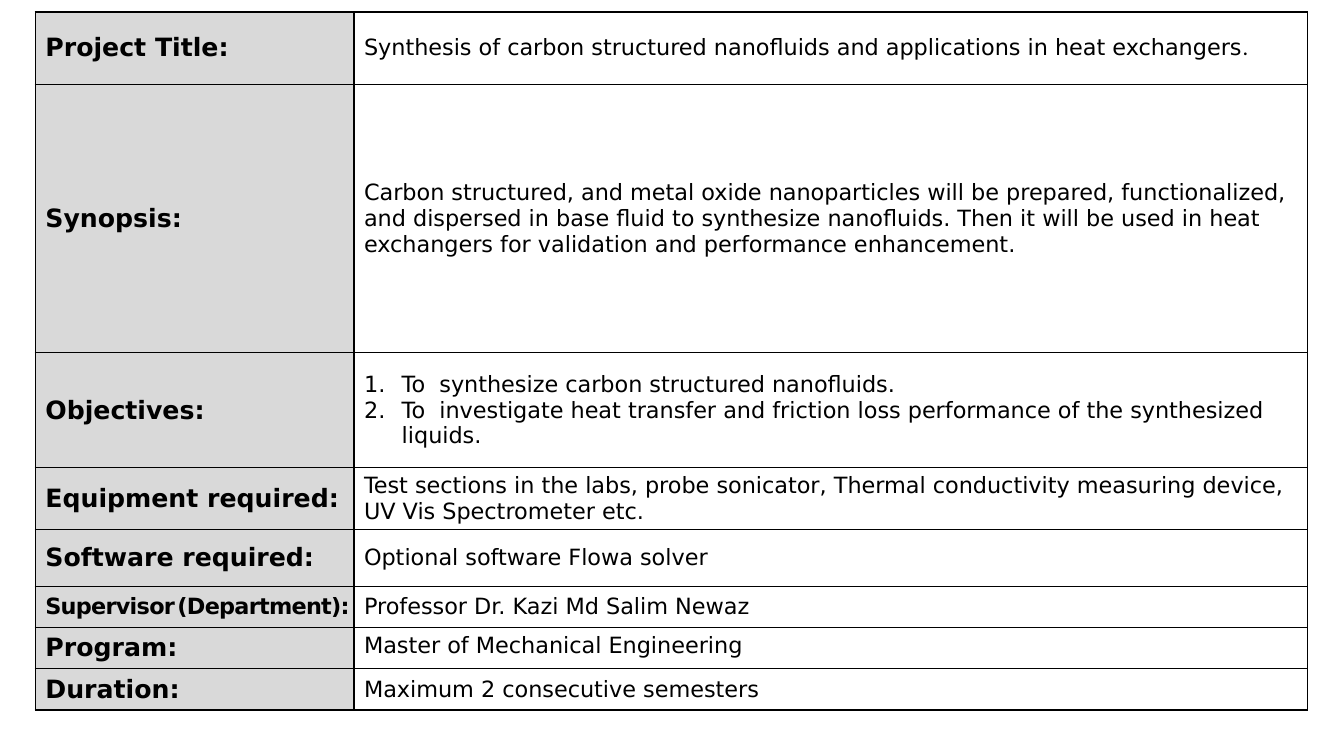
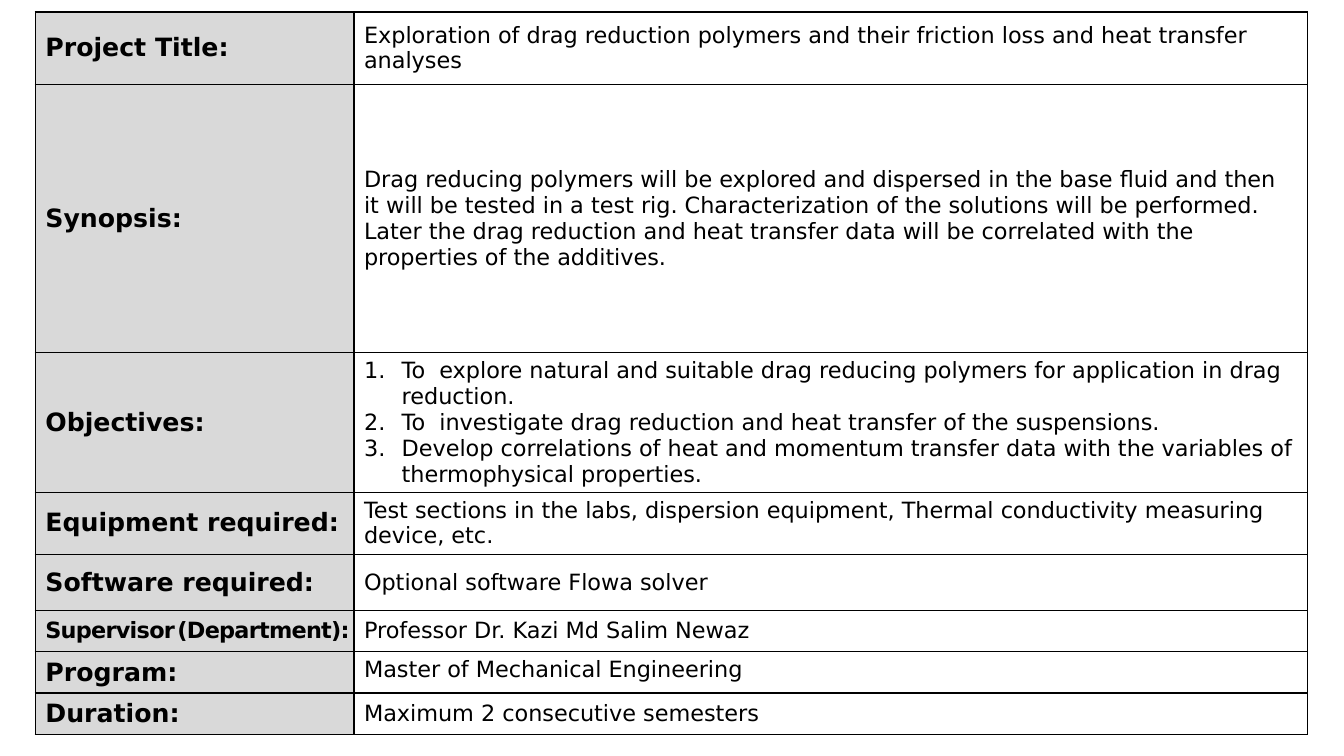
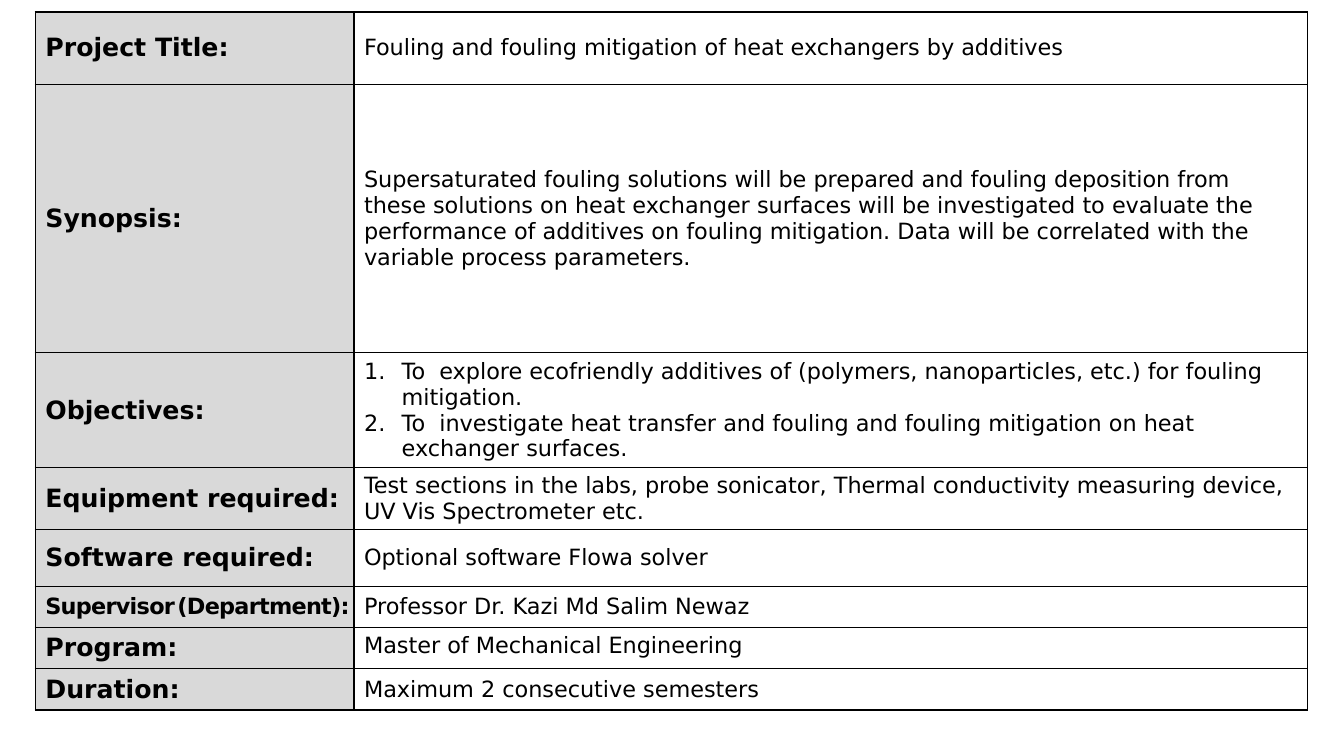
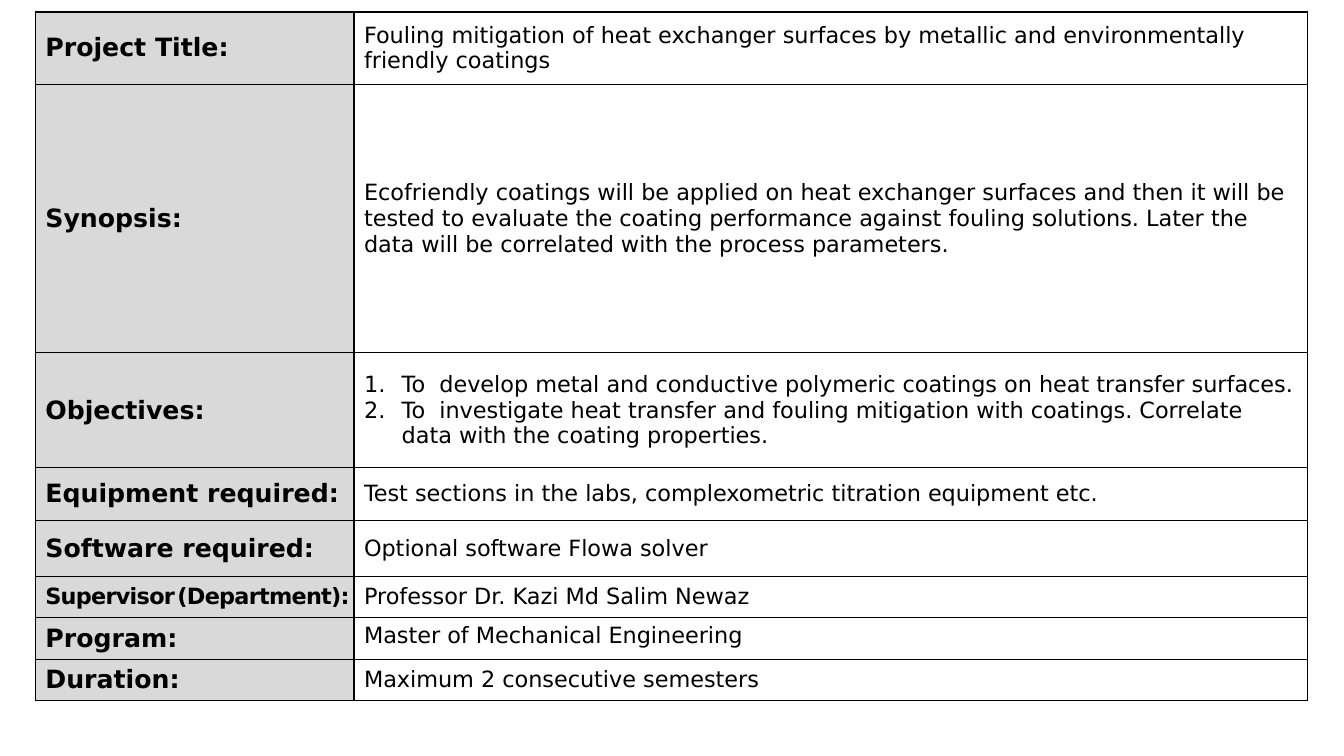
from dataclasses import dataclass
from typing import NamedTuple

from lxml import etree
from pptx import Presentation
from pptx.dml.color import RGBColor
from pptx.enum.text import MSO_ANCHOR
from pptx.oxml.ns import qn
from pptx.util import Cm, Pt

TOP, MIDDLE = MSO_ANCHOR.TOP, MSO_ANCHOR.MIDDLE

COLORS = {"text": "000000", "border": "000000", "label": "D9D9D9"}
FONT = "DejaVu Sans"
LABEL_SIZE, VALUE_SIZE = 18, 16
LEFT, TABLE_TOP = 0.89, 0.3
COLUMN_WIDTHS = (8.03, 24.03)
NUMBER_INDENT = 0.95


class Span(NamedTuple):
    text: str
    size: float = VALUE_SIZE
    bold: bool = False
    font: str = FONT
    spacing: float = 0


class Field(NamedTuple):
    label: list[Span]
    height: float
    value_anchor: MSO_ANCHOR = MIDDLE
    label_margin_right: float = 0.25


@dataclass(frozen=True)
class Project:
    title: list[Span]
    synopsis: str
    objectives: list[str]
    equipment: str
    software: str = "Optional software Flowa solver"
    supervisor: str = "Professor Dr. Kazi Md Salim Newaz"
    program: str = "Master of Mechanical Engineering"
    duration: str = "Maximum 2 consecutive semesters"

    def values(self) -> list[list[list[Span]]]:
        """Give the paragraphs of each field, in table order."""
        rest = (self.equipment, self.software, self.supervisor, self.program, self.duration)
        return [
            [self.title],
            [[Span(self.synopsis)]],
            [[Span(objective)] for objective in self.objectives],
            *([[Span(text)]] for text in rest),
        ]


def label(text: str) -> list[Span]:
    return [Span(text, LABEL_SIZE, True)]


SUPERVISOR_LABEL = [
    Span("Supervisor", bold=True, spacing=-0.5),
    Span(" ", 5, True, spacing=-0.5),
    Span("(Department):", bold=True, spacing=-0.5),
]

OBJECTIVES = Field(label("Objectives:"), 2.9)
FIELDS = [
    Field(label("Project Title:"), 1.83),
    Field(label("Synopsis:"), 6.76),
    OBJECTIVES,
    Field(label("Equipment required:"), 1.32),
    Field(label("Software required:"), 1.42),
    Field(SUPERVISOR_LABEL, 1.04, label_margin_right=0),
    Field(label("Program:"), 1.04, TOP),
    Field(label("Duration:"), 1.04),
]

SONICATOR_EQUIPMENT = (
    "Test sections in the labs, probe sonicator, Thermal conductivity measuring device, "
    "UV Vis Spectrometer etc."
)

PROJECTS = [
    Project(
        [
            Span("Synthesis of carbon structured nanofluids and applications in heat exchangers"),
            Span(".", font="Calibri"),
        ],
        "Carbon structured, and metal oxide nanoparticles will be prepared, functionalized, "
        "and dispersed in base fluid to synthesize nanofluids. Then it will be used in heat "
        "exchangers for validation and performance enhancement.",
        [
            "To  synthesize carbon structured nanofluids.",
            "To  investigate heat transfer and friction loss performance of the synthesized "
            "liquids.",
        ],
        SONICATOR_EQUIPMENT,
    ),
    Project(
        [Span("Exploration of drag reduction polymers and their friction loss and heat transfer "
              "analyses")],
        "Drag reducing polymers will be explored and dispersed in the base fluid and then it "
        "will be tested in a test rig. Characterization of the solutions will be performed. "
        "Later the drag reduction and heat transfer data will be correlated with the "
        "properties of the additives.",
        [
            "To  explore natural and suitable drag reducing polymers for application in drag "
            "reduction.",
            "To  investigate drag reduction and heat transfer of the suspensions.",
            "Develop correlations of heat and momentum transfer data with the variables of "
            "thermophysical properties.",
        ],
        "Test sections in the labs, dispersion equipment, Thermal conductivity measuring "
        "device, etc.",
    ),
    Project(
        [Span("Fouling and fouling mitigation of heat exchangers by additives")],
        "Supersaturated fouling solutions will be prepared and fouling deposition from these "
        "solutions on heat exchanger surfaces will be investigated to evaluate the "
        "performance of additives on fouling mitigation. Data will be correlated with the "
        "variable process parameters.",
        [
            "To  explore ecofriendly additives of (polymers, nanoparticles, etc.) for fouling "
            "mitigation.",
            "To  investigate heat transfer and fouling and fouling mitigation on heat "
            "exchanger surfaces.",
        ],
        SONICATOR_EQUIPMENT,
    ),
    Project(
        [Span("Fouling mitigation of heat exchanger surfaces by metallic and environmentally "
              "friendly coatings")],
        "Ecofriendly coatings will be applied on heat exchanger surfaces and then it will be "
        "tested to evaluate the coating performance against fouling solutions. Later the "
        "data will be correlated with the process parameters.",
        [
            "To  develop metal and conductive polymeric coatings on heat transfer surfaces.",
            "To  investigate heat transfer and fouling mitigation with coatings. Correlate "
            "data with the coating properties.",
        ],
        "Test sections in the labs, complexometric titration equipment etc.",
    ),
]


def number_paragraph(p) -> None:
    pPr = p._p.get_or_add_pPr()
    pPr.set("marL", str(Cm(NUMBER_INDENT)))
    pPr.set("indent", str(-Cm(NUMBER_INDENT)))
    etree.SubElement(pPr, qn("a:buAutoNum"), type="arabicPeriod")


def add_borders(cell) -> None:
    tcPr = cell._tc.get_or_add_tcPr()
    for i, side in enumerate(("lnL", "lnR", "lnT", "lnB")):
        ln = etree.Element(qn(f"a:{side}"), w=str(Pt(1)))
        fill = etree.SubElement(ln, qn("a:solidFill"))
        etree.SubElement(fill, qn("a:srgbClr"), val=COLORS["border"])
        tcPr.insert(i, ln)


def fill_cell(cell, paragraphs: list[list[Span]], anchor: MSO_ANCHOR = MIDDLE,
              numbered: bool = False) -> None:
    cell.vertical_anchor = anchor
    tf = cell.text_frame
    for i, spans in enumerate(paragraphs):
        p = tf.add_paragraph() if i else tf.paragraphs[0]
        if numbered:
            number_paragraph(p)
        for span in spans:
            r = p.add_run()
            r.text = span.text
            r.font.name = span.font
            r.font.size = Pt(span.size)
            r.font.bold = span.bold
            r.font.color.rgb = RGBColor.from_string(COLORS["text"])
            if span.spacing:
                r.font._element.set("spc", str(int(span.spacing * 100)))
    add_borders(cell)


def add_project_slide(prs, project: Project) -> None:
    slide = prs.slides.add_slide(prs.slide_layouts[6])
    frame = slide.shapes.add_table(
        len(FIELDS), len(COLUMN_WIDTHS), Cm(LEFT), Cm(TABLE_TOP),
        Cm(sum(COLUMN_WIDTHS)), Cm(sum(field.height for field in FIELDS)))
    table = frame.table
    table.first_row = table.horz_banding = False
    for column, width in zip(table.columns, COLUMN_WIDTHS):
        column.width = Cm(width)

    for i, (field, value) in enumerate(zip(FIELDS, project.values())):
        table.rows[i].height = Cm(field.height)
        label_cell, value_cell = table.cell(i, 0), table.cell(i, 1)
        label_cell.fill.solid()
        label_cell.fill.fore_color.rgb = RGBColor.from_string(COLORS["label"])
        label_cell.margin_right = Cm(field.label_margin_right)
        fill_cell(label_cell, [field.label])
        value_cell.fill.background()
        fill_cell(value_cell, value, field.value_anchor, numbered=field is OBJECTIVES)


def main() -> None:
    prs = Presentation()
    prs.slide_width, prs.slide_height = Cm(33.87), Cm(19.05)
    for project in PROJECTS:
        add_project_slide(prs, project)
    prs.save("out.pptx")


if __name__ == "__main__":
    main()
